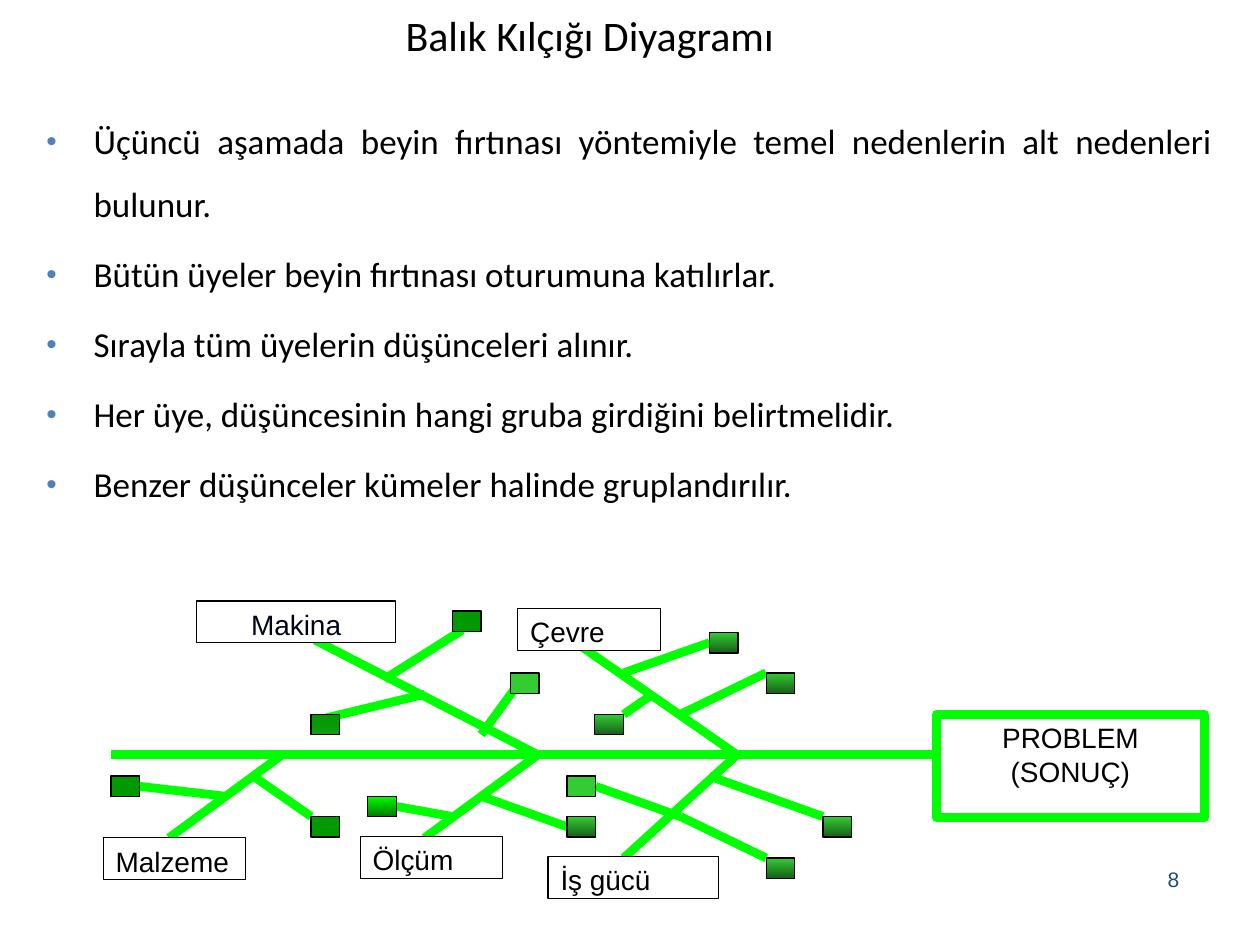
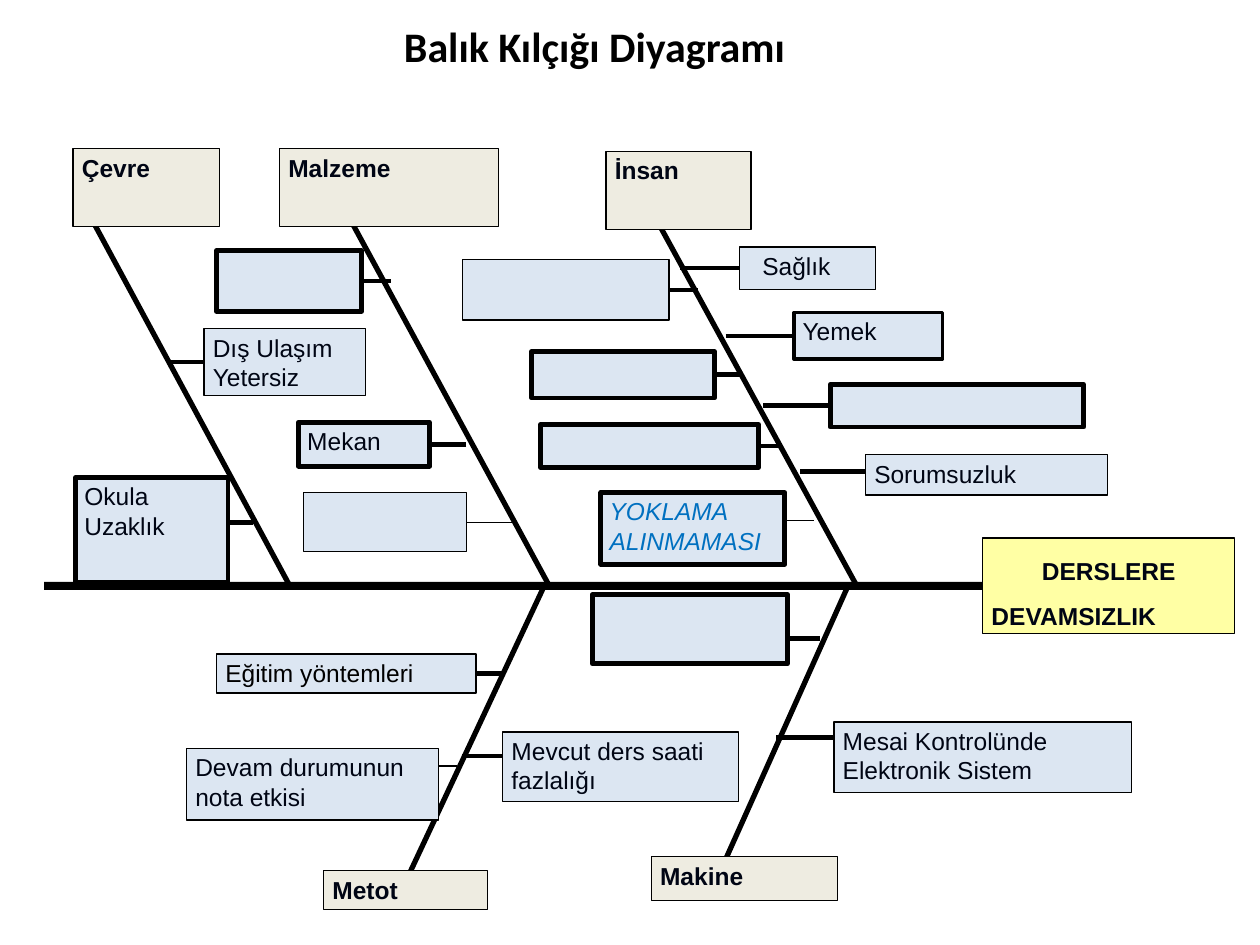
from lxml.etree import SubElement
from pptx import Presentation
from pptx.dml.color import RGBColor
from pptx.enum.shapes import MSO_CONNECTOR, MSO_SHAPE
from pptx.enum.text import MSO_ANCHOR, PP_ALIGN
from pptx.oxml.ns import qn
from pptx.util import Pt

COLORS = {
    "black": "000000", "white": "FFFFFF", "ink": "000514", "navy": "1F497D",
    "bullet": "4F81BD", "bone": "00FF00", "dark green": "009900",
    "mid green": "33CC33", "deep green": "185E18", "moss": "0C9E0C",
    "forest": "007900", "cause": "DCE6F2", "category": "EEECE1",
    "result": "FFFF99", "blue": "0070C0",
}
TITLE = "Balık Kılçığı Diyagramı"
LEFT_SIDE, RIGHT_SIDE = 1, 3
THIN, THICK = 0.75, 2.75
TIGHT = (5, 2.2)

STEPS = [
    "Üçüncü aşamada beyin fırtınası yöntemiyle temel nedenlerin alt nedenleri bulunur.",
    "Bütün üyeler beyin fırtınası oturumuna katılırlar.",
    "Sırayla tüm üyelerin düşünceleri alınır.",
    "Her üye, düşüncesinin hangi gruba girdiğini belirtmelidir.",
    "Benzer düşünceler kümeler halinde gruplandırılır.",
]

# Green fishbone: spine x, then the far end of each bone
GREEN_SPINE_Y = 431.3
GREEN_BONES = [
    (307.4, 242.6, 478.8), (421.2, 356.4, 490.3), (307.4, 180, 365.8),
    (421.2, 329, 367.2), (161.3, 96.5, 478.8),
]
GREEN_LABELS = [
    ("Makina", (112.3, 343.4, 113.8, 23.8), PP_ALIGN.CENTER),
    ("Malzeme", (59, 478.8, 81.4, 23.8), PP_ALIGN.LEFT),
    ("Ölçüm", (205.9, 478.1, 81.4, 23.8), PP_ALIGN.LEFT),
    ("İş gücü", (313.2, 489.6, 97.2, 23.8), PP_ALIGN.LEFT),
    ("Çevre", (295.9, 347.8, 81.4, 23.8), PP_ALIGN.LEFT),
]
SHADED = ("mid green", "deep green")
# Box corner, fill, twig start, twig end, side the twig is joined to
GREEN_CAUSES = [
    ((470.2, 466.6), SHADED, (405.4, 443.5), (470.2, 466.6), None),
    ((437.8, 490.3), SHADED, (388.8, 466.6), (437.8, 490.3), None),
    ((324, 443.5), "mid green", (388.8, 466.6), (340.4, 449.4), RIGHT_SIDE),
    ((324, 466.6), SHADED, (275, 455), (324, 472.5), LEFT_SIDE),
    ((210.2, 455), ("bone", "forest"), (258.5, 466.6), (226.6, 460.9), RIGHT_SIDE),
    ((177.8, 466.6), "dark green", (144.7, 443.5), (177.8, 466.6), None),
    ((63.4, 443.5), "dark green", (128.9, 455), (79.8, 449.4), RIGHT_SIDE),
    ((258.5, 349.2), "dark green", (219.6, 388.1), (264.2, 360), None),
    ((291.6, 384.5), "mid green", (275, 419.8), (298.1, 388.1), None),
    ((437.8, 384.5), SHADED, (388.8, 408.2), (437.8, 384.5), None),
    ((405.4, 361.4), SHADED, (356.4, 384.5), (405.4, 367.3), LEFT_SIDE),
    ((177.8, 408.2), ("dark green", "moss"), (242.6, 396.7), (185.8, 410.4), None),
    ((339.8, 408.2), SHADED, (373, 396.7), (356.4, 408.2), None),
]

# Absence fishbone: text, box, outline, x on the bone, stub width,
# stub y (None: middle of the box's side)
ABSENCE_CAUSES = [
    ("Sağlık", (422.6, 141.1, 77.8, 24.5), THIN, 388.8, 2.25, None),
    ("Yemek", (453.6, 178.6, 85, 26.6), 2, 414.7, 2, None),
    ("", (474.5, 219.6, 144.7, 24.5), THICK, 436.3, THICK, None),
    ("Sorumsuzluk", (494.6, 259.9, 138.2, 23), THIN, 457.2, THICK, 269.3),
    ("", (264.2, 148.3, 118.1, 34.6), THIN, 398.9, 2.5, None),
    ("", (303.8, 200.9, 104.4, 26.6), THICK, 422.6, THICK, None),
    ("", (308.9, 242.6, 124.6, 24.5), THICK, 446.4, THICK, None),
    ("YOKLAMA ALINMAMASI", (343.4, 281.5, 105.1, 41), THICK, 465.1, THIN, 297.4),
    ("", (123.8, 143.3, 82.8, 34.6), THICK, 223.2, THICK, None),
    ("", (173.5, 281.5, 92.9, 33.8), THIN, 293, THIN, None),
    ("Okula\nUzaklık", (43.2, 272.9, 87.1, 59.8), THICK, 144.7, THICK, 298.8),
    ("Mekan", (170.6, 241.2, 74.9, 25.2), THICK, 266.4, THICK, None),
    ("Dış Ulaşım\nYetersiz", (116.6, 187.9, 92.2, 38.2), THIN, 97.2, 2.25, None),
    ("Eğitim yöntemleri", (123.8, 373.7, 148.3, 22.3), THIN, 288, THICK, None),
    ("Mevcut ders saati fazlalığı", (287.3, 418.3, 134.6, 39.6), THIN, 264.2, THICK, 432),
    ("", (338.4, 339.8, 111.6, 39.6), THICK, 468.7, THICK, 365),
    ("Mesai Kontrolünde\nElektronik Sistem", (476.6, 412.6, 169.9, 40.3), THIN,
     443.5, THICK, 421.2),
]
GRADE_CAUSE = ("Devam durumunun nota etkisi", (106.6, 427.7, 144, 41), THIN,
               261.4, THIN, 437.8)
ABSENCE_SPINE_Y = 334.8
ABSENCE_BONES = [
    (489.6, 372.2, 120.2), (313.9, 197.3, 120.2), (165.6, 49.7, 120.2),
    (484.6, 411.1, 499), (311, 229.7, 508.3),
]
CATEGORIES = [
    ("İnsan", (346.3, 86.4, 82.8, 44.6)),
    ("Malzeme", (159.8, 85, 125.3, 44.6)),
    ("Çevre", (41.8, 85, 83.5, 44.6)),
    ("Makine", (372.2, 489.6, 106.6, 25.2)),
    ("Metot", (185, 497.5, 93.6, 22.3)),
]


def rgb(name):
    return RGBColor.from_string(COLORS[name])


def points(values):
    return [Pt(value) for value in values]


def add_run(paragraph, text, size, color, font="Arial", bold=False, italic=False):
    run = paragraph.add_run()
    run.text = text
    run.font.size, run.font.name = Pt(size), font
    run.font.bold, run.font.italic = bold, italic
    run.font.color.rgb = rgb(color)


def write(shape, text, size, color, align=PP_ALIGN.LEFT, inset=(7.2, 3.6), **style):
    """Fill the shape from its top, one paragraph for each line of text."""
    frame = shape.text_frame
    frame.word_wrap = True
    frame.vertical_anchor = MSO_ANCHOR.TOP
    frame.margin_left = frame.margin_right = Pt(inset[0])
    frame.margin_top = frame.margin_bottom = Pt(inset[1])
    for index, line in enumerate(text.split("\n")):
        paragraph = frame.add_paragraph() if index else frame.paragraphs[0]
        paragraph.alignment = align
        add_run(paragraph, line, size, color, **style)


def add_box(slide, box, fill, line_color="black", line_width=THIN):
    """Add a rectangle; fill is a colour, a pair for a gradient, or None."""
    shape = slide.shapes.add_shape(MSO_SHAPE.RECTANGLE, *points(box))
    shape.shadow.inherit = False
    if fill is None:
        shape.fill.background()
    elif isinstance(fill, tuple):
        shape.fill.gradient()
        shape.fill.gradient_angle = 270
        for stop, color in zip(shape.fill.gradient_stops, fill):
            stop.color.rgb = rgb(color)
    else:
        shape.fill.solid()
        shape.fill.fore_color.rgb = rgb(fill)
    shape.line.color.rgb = rgb(line_color)
    shape.line.width = Pt(line_width)
    return shape


def add_line(slide, start, end, color, width):
    connector = slide.shapes.add_connector(MSO_CONNECTOR.STRAIGHT, *points(start + end))
    connector.line.color.rgb = rgb(color)
    connector.line.width = Pt(width)
    SubElement(connector.element.spPr, qn("a:effectLst"))
    return connector


def add_titled_slide(presentation, box, bold):
    slide = presentation.slides.add_slide(presentation.slide_layouts[5])
    title = slide.shapes.title
    title.left, title.top, title.width, title.height = points(box)
    title.text_frame.vertical_anchor = MSO_ANCHOR.MIDDLE
    paragraph = title.text_frame.paragraphs[0]
    paragraph.alignment = PP_ALIGN.CENTER
    add_run(paragraph, TITLE, 24, "black", "Calibri", bold)
    return slide


def add_bullet(paragraph):
    properties = paragraph._p.get_or_add_pPr()
    properties.set("marL", str(Pt(27)))
    properties.set("indent", str(-Pt(27)))
    color = SubElement(properties, qn("a:buClr"))
    SubElement(color, qn("a:srgbClr"), val=COLORS["bullet"])
    SubElement(properties, qn("a:buSzPct"), val="85000")
    SubElement(properties, qn("a:buFont"), typeface="Arial")
    SubElement(properties, qn("a:buChar"), char="•")


def add_steps(slide):
    frame = slide.shapes.add_textbox(*points((19.4, 53, 680.4, 250))).text_frame
    frame.word_wrap = True
    for index, step in enumerate(STEPS):
        paragraph = frame.add_paragraph() if index else frame.paragraphs[0]
        paragraph.alignment = PP_ALIGN.JUSTIFY
        paragraph.line_spacing = 1.5
        paragraph.space_before = Pt(4)
        add_bullet(paragraph)
        add_run(paragraph, step, 20, "black", "Calibri")


def add_green_cause(slide, corner, fill, start, end, side):
    twig = add_line(slide, start, end, "bone", 5)
    box = add_box(slide, corner + (16.4, 11.7), fill)
    if side is not None:
        twig.end_connect(box, side)


def add_green_fishbone(slide):
    add_line(slide, (63.4, GREEN_SPINE_Y), (535, GREEN_SPINE_Y), "bone", 5)
    for spine_x, end_x, end_y in GREEN_BONES:
        add_line(slide, (spine_x, GREEN_SPINE_Y), (end_x, end_y), "bone", 5)
    problem = add_box(slide, (535, 408.2, 153.4, 59), None, "bone", 5)
    write(problem, "PROBLEM\n(SONUÇ)", 16, "black", PP_ALIGN.CENTER)
    for cause in GREEN_CAUSES:
        add_green_cause(slide, *cause)
    for text, box, align in GREEN_LABELS:
        color = "ink" if text == "Makina" else "black"
        write(add_box(slide, box, "white"), text, 16, color, align)


def add_absence_cause(slide, text, box, outline, bone_x, stub_width, stub_y):
    """Add a cause box with the stub that ties it to its bone."""
    left, top, width, height = box
    side, edge_x = (LEFT_SIDE, left) if bone_x < left else (RIGHT_SIDE, left + width)
    y = stub_y or top + height / 2
    stub = add_line(slide, (bone_x, y), (edge_x, y), "black", stub_width)
    shape = add_box(slide, box, "cause", line_width=outline)
    if stub_y is None:
        stub.end_connect(shape, side)
    if text:
        stressed = text.isupper()
        color = "blue" if stressed else "black" if text.startswith("Eğitim") else "ink"
        write(shape, text, 14, color, inset=TIGHT, italic=stressed)
    if text == "Sağlık":
        shape.text_frame.margin_left = Pt(13)


def add_result(slide):
    result = add_box(slide, (561.6, 307.4, 144, 54.8), "result")
    color = result.element.spPr.find(qn("a:solidFill")).find(qn("a:srgbClr"))
    SubElement(color, qn("a:alpha"), val="89000")
    write(result, "DERSLERE\nDEVAMSIZLIK", 14, "ink", inset=TIGHT, bold=True)
    for paragraph in result.text_frame.paragraphs:
        paragraph.line_spacing = 1.5
    result.text_frame.paragraphs[0].alignment = PP_ALIGN.CENTER
    return result


def add_absence_fishbone(slide):
    for cause in ABSENCE_CAUSES:
        add_absence_cause(slide, *cause)
    spine = add_line(slide, (25.2, ABSENCE_SPINE_Y), (561.6, ABSENCE_SPINE_Y), "black", 4.5)
    for spine_x, end_x, end_y in ABSENCE_BONES:
        add_line(slide, (spine_x, ABSENCE_SPINE_Y), (end_x, end_y), "black", 3)
    for text, box in CATEGORIES:
        write(add_box(slide, box, "category"), text, 14, "ink", inset=TIGHT, bold=True)
    add_absence_cause(slide, *GRADE_CAUSE)
    spine.end_connect(add_result(slide), LEFT_SIDE)


def main():
    presentation = Presentation()
    presentation.slide_width, presentation.slide_height = Pt(720), Pt(540)

    slide = add_titled_slide(presentation, (16.6, -5.8, 640.8, 51.1), bold=False)
    add_steps(slide)
    add_green_fishbone(slide)
    number = slide.shapes.add_textbox(*points((516, 491.8, 165, 36)))
    write(number, "8", 12, "navy", PP_ALIGN.RIGHT)

    slide = add_titled_slide(presentation, (19.4, 3.6, 640.8, 45.4), bold=True)
    add_absence_fishbone(slide)

    presentation.save("out.pptx")


if __name__ == "__main__":
    main()
